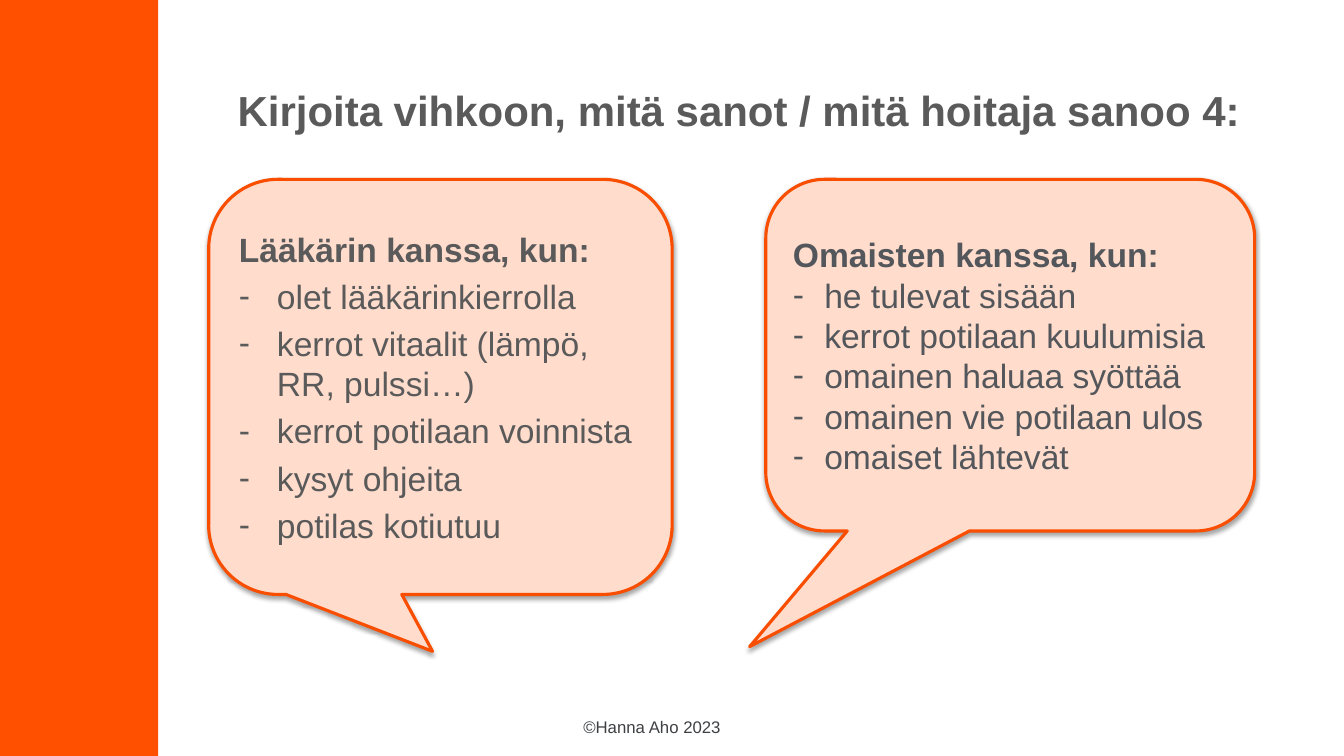
from lxml import etree
from pptx import Presentation
from pptx.dml.color import RGBColor as Rgb
from pptx.enum.shapes import MSO_SHAPE as Kind
from pptx.enum.text import MSO_ANCHOR as Anchor, MSO_AUTO_SIZE as Auto, PP_ALIGN as Align
from pptx.oxml import parse_xml
from pptx.oxml.ns import nsdecls, qn
from pptx.util import Cm, Pt


def tint(code):
    return Rgb.from_string(code)


def write(para, text, size, color, bold=False):
    para.text = text
    para.alignment = Align.LEFT
    para.font.color.rgb = tint(color)
    look = {"name": "Arial", "size": Pt(size), "bold": bold}
    for key, value in look.items():
        setattr(para.font, key, value)


deck = Presentation()
deck.slide_width, deck.slide_height = Cm(33.87), Cm(19.05)
slide = deck.slides.add_slide(deck.slide_layouts[6])
shapes = slide.shapes

# Side band
band = shapes.add_shape(Kind.RECTANGLE, 0, 0, Cm(3.99), deck.slide_height)
band.shadow.inherit = False
band.fill.solid()
band.fill.fore_color.rgb = tint("FF5000")
band.line.fill.background()

# Title and footer
labels = [
    ("Kirjoita vihkoon, mitä sanot / mitä hoitaja sanoo 4:",
     (5.74, 1.5, 27.13, 2.03), 30, "5A5A5A", True, Anchor.BOTTOM, Auto.NONE),
    ("©Hanna Aho 2023",
     (14.45, 17.93, 4.95, 0.76), 12, "3E4043", False, Anchor.TOP, Auto.SHAPE_TO_FIT_TEXT),
]
for text, place, size, color, bold, anchor, fit in labels:
    frame = shapes.add_textbox(*map(Cm, place)).text_frame
    frame.word_wrap = True
    frame.vertical_anchor = anchor
    frame.auto_size = fit
    write(frame.paragraphs[0], text, size, color, bold)

# Speech bubbles: place, tail, text colour, indent, gap before, lines
bubbles = [
    ((5.26, 4.52, 11.68, 10.46), (-0.017, 0.637), "5A5A5A", 0.96, 4.8,
     ["Lääkärin kanssa, kun:", "olet lääkärinkierrolla",
      "kerrot vitaalit (lämpö, RR, pulssi…)", "kerrot potilaan voinnista",
      "kysyt ohjeita", "potilas kotiutuu"]),
    ((19.3, 4.52, 12.32, 8.86), (-0.533, 0.829), "53565A", 0.79, 0,
     ["Omaisten kanssa, kun:", "he tulevat sisään", "kerrot potilaan kuulumisia",
      "omainen haluaa syöttää", "omainen vie potilaan ulos", "omaiset lähtevät"]),
]
for place, tail, color, indent, gap, lines in bubbles:
    bubble = shapes.add_shape(Kind.ROUNDED_RECTANGULAR_CALLOUT, *map(Cm, place))
    for n, value in enumerate((*tail, 0.167)):
        bubble.adjustments[n] = value
    bubble.fill.solid()
    bubble.fill.fore_color.rgb = tint("FFDCCC")
    bubble.line.color.rgb = tint("F94E00")
    bubble.line.width = Pt(2.25)

    # Soft shadow straight below
    bubble.shadow.inherit = False
    bubble.element.spPr.find(qn("a:effectLst")).append(parse_xml(
        f'<a:outerShdw {nsdecls("a")} blurRad="{Pt(3.1)}" dist="{Pt(1.8)}" dir="5400000"'
        ' rotWithShape="0"><a:srgbClr val="000000"><a:alpha val="35000"/></a:srgbClr>'
        '</a:outerShdw>'))

    # Heading and dashed list
    frame = bubble.text_frame
    frame.word_wrap = True
    frame.vertical_anchor = Anchor.MIDDLE
    for n, line in enumerate(lines):
        para = frame.add_paragraph() if n else frame.paragraphs[0]
        if n:
            para.space_before = Pt(gap)
            props = para._p.get_or_add_pPr()
            props.set("marL", str(Cm(indent)))
            props.set("indent", str(-Cm(indent)))
            etree.SubElement(props, qn("a:buFont")).set("typeface", "Arial")
            etree.SubElement(props, qn("a:buChar")).set("char", "-")
        write(para, line, 24, color, bold=not n)

deck.save("out.pptx")
